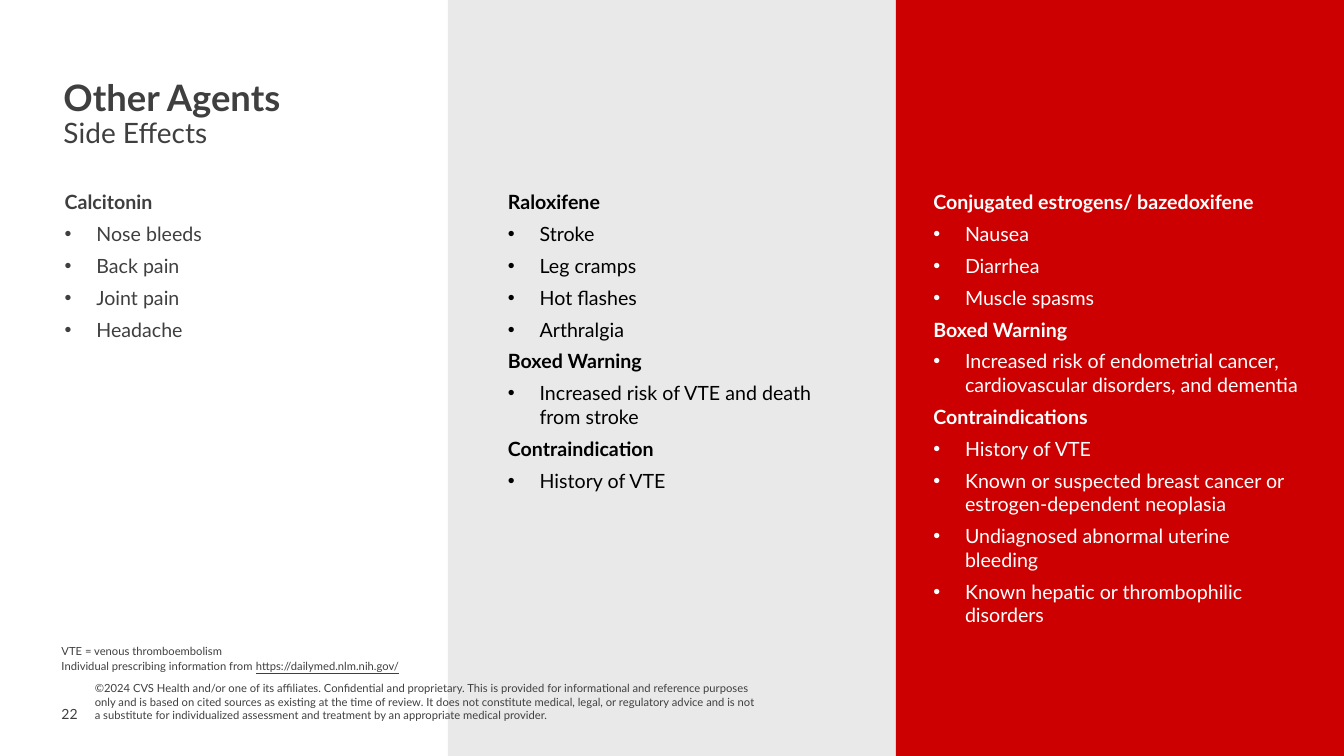
import pptx
import pptx.util
from lxml import etree
from pptx.dml.color import RGBColor
from pptx.enum.shapes import MSO_SHAPE
from pptx.enum.text import MSO_ANCHOR, MSO_AUTO_SIZE, PP_ALIGN
from pptx.oxml.ns import qn
from pptx.util import Cm, Pt

CHARCOAL = RGBColor(0x3F, 0x3F, 0x3F)
BLACK = RGBColor(0, 0, 0)
WHITE = RGBColor(0xFF, 0xFF, 0xFF)
GREY = RGBColor(0xE9, 0xE9, 0xE9)
RED = RGBColor(0xCC, 0, 0)

PAGE_WIDTH, PAGE_HEIGHT = 33.87, 19.05
BAND = PAGE_WIDTH / 3
LIST_TOP, LIST_HEIGHT = 4.78, 7.19

# Each agent: left, width, text colour, sections of (heading, bullets)
AGENTS = [
    (1.63, 6.58, CHARCOAL, [
        ("Calcitonin", ["Nose bleeds", "Back pain", "Joint pain", "Headache"]),
    ]),
    (12.8, 8.28, BLACK, [
        ("Raloxifene", ["Stroke", "Leg cramps", "Hot flashes", "Arthralgia"]),
        ("Boxed Warning", ["Increased risk of VTE and death from stroke"]),
        ("Contraindication", ["History of VTE"]),
    ]),
    (23.52, 9.3, WHITE, [
        ("Conjugated estrogens/ bazedoxifene",
         ["Nausea", "Diarrhea", "Muscle spasms"]),
        ("Boxed Warning",
         ["Increased risk of endometrial cancer, cardiovascular disorders, "
          "and dementia"]),
        ("Contraindications",
         ["History of VTE",
          "Known or suspected breast cancer or estrogen-dependent neoplasia",
          "Undiagnosed abnormal uterine bleeding",
          "Known hepatic or thrombophilic disorders"]),
    ]),
]

COPYRIGHT = (
    "©2024 CVS Health and/or one of its affiliates. Confidential and "
    "proprietary. This is provided for informational and reference purposes "
    "only and is based on cited sources as existing at the time of review. It "
    "does not constitute medical, legal, or regulatory advice and is not a "
    "substitute for individualized assessment and treatment by an appropriate "
    "medical provider."
)


def add_text(para, text, size=14, color=CHARCOAL, bold=False, underline=False):
    span = para.add_run()
    span.text = text
    font = span.font
    font.name = "Lato"
    font.size = Pt(size)
    font.bold = bold
    font.underline = underline
    font.color.rgb = color


def add_bullet(para, indent=0.8):
    """Give the paragraph a hanging round bullet."""
    props = para._p.get_or_add_pPr()
    props.set("marL", str(Cm(indent)))
    props.set("indent", str(-Cm(indent)))
    etree.SubElement(props, qn("a:buFont"), typeface="Arial")
    etree.SubElement(props, qn("a:buChar"), char="•")


class AgentPage:
    """Holds the page being built and its shared style."""

    def __init__(self, deck):
        self.page = deck.slides.add_slide(deck.slide_layouts[5])

    def frame(self, box, anchor):
        """Clear margins, wrap the text and return the text frame."""
        frame = box.text_frame
        frame.margin_left = frame.margin_right = 0
        frame.margin_top = frame.margin_bottom = 0
        frame.word_wrap = True
        frame.auto_size = MSO_AUTO_SIZE.NONE
        frame.vertical_anchor = anchor
        return frame

    def band(self, column, color):
        shape = self.page.shapes.add_shape(
            MSO_SHAPE.RECTANGLE, Cm(column * BAND), 0, Cm(BAND), Cm(PAGE_HEIGHT))
        shape.shadow.inherit = False
        shape.fill.solid()
        shape.fill.fore_color.rgb = color
        shape.line.fill.background()

    def title(self, heading, subheading):
        box = self.page.shapes.title
        box.left, box.top, box.width, box.height = Cm(1.6), Cm(1.55), Cm(30.84), Cm(2.69)
        para = self.frame(box, MSO_ANCHOR.MIDDLE).paragraphs[0]
        para.alignment = PP_ALIGN.LEFT
        para.line_spacing = 0.9
        add_text(para, heading, size=26, bold=True)
        para.add_line_break()
        add_text(para, subheading, size=20)
        # Keep the title in front of the bands
        self.page.shapes._spTree.append(box._element)

    def text_box(self, left, top, width, height, anchor=MSO_ANCHOR.TOP):
        box = self.page.shapes.add_textbox(Cm(left), Cm(top), Cm(width), Cm(height))
        return self.frame(box, anchor)

    def agent(self, left, width, color, sections):
        """Add one agent's headings, each followed by its bullets."""
        frame = self.text_box(left, LIST_TOP, width, LIST_HEIGHT)
        lines = [(text, text == heading) for heading, bullets in sections
                 for text in [heading, *bullets]]
        for index, (text, is_heading) in enumerate(lines):
            para = frame.add_paragraph() if index else frame.paragraphs[0]
            if index:
                para.space_before = Pt(6)
            if not is_heading:
                add_bullet(para)
            add_text(para, text, color=color, bold=is_heading)

    def note(self, left, top, width, height, text, size=8, anchor=MSO_ANCHOR.BOTTOM):
        frame = self.text_box(left, top, width, height, anchor)
        add_text(frame.paragraphs[0], text, size=size)
        return frame


def main():
    deck = pptx.Presentation()
    deck.slide_width, deck.slide_height = Cm(PAGE_WIDTH), Cm(PAGE_HEIGHT)

    page = AgentPage(deck)
    page.band(1, GREY)
    page.band(2, RED)
    page.title("Other Agents", "Side Effects")
    for agent in AGENTS:
        page.agent(*agent)

    sources = page.note(1.55, 15.67, 22.86, 1.27, "VTE = venous thromboembolism")
    para = sources.add_paragraph()
    para.space_before = Pt(1)
    add_text(para, "Individual prescribing information from ", size=8)
    add_text(para, "https://dailymed.nlm.nih.gov/", size=8, underline=True)

    page.note(2.39, 17.17, 16.71, 1.02, COPYRIGHT)
    page.note(1.55, 17.68, 0.8, 0.64, "22", size=10, anchor=MSO_ANCHOR.MIDDLE)

    deck.save("out.pptx")


if __name__ == "__main__":
    main()
